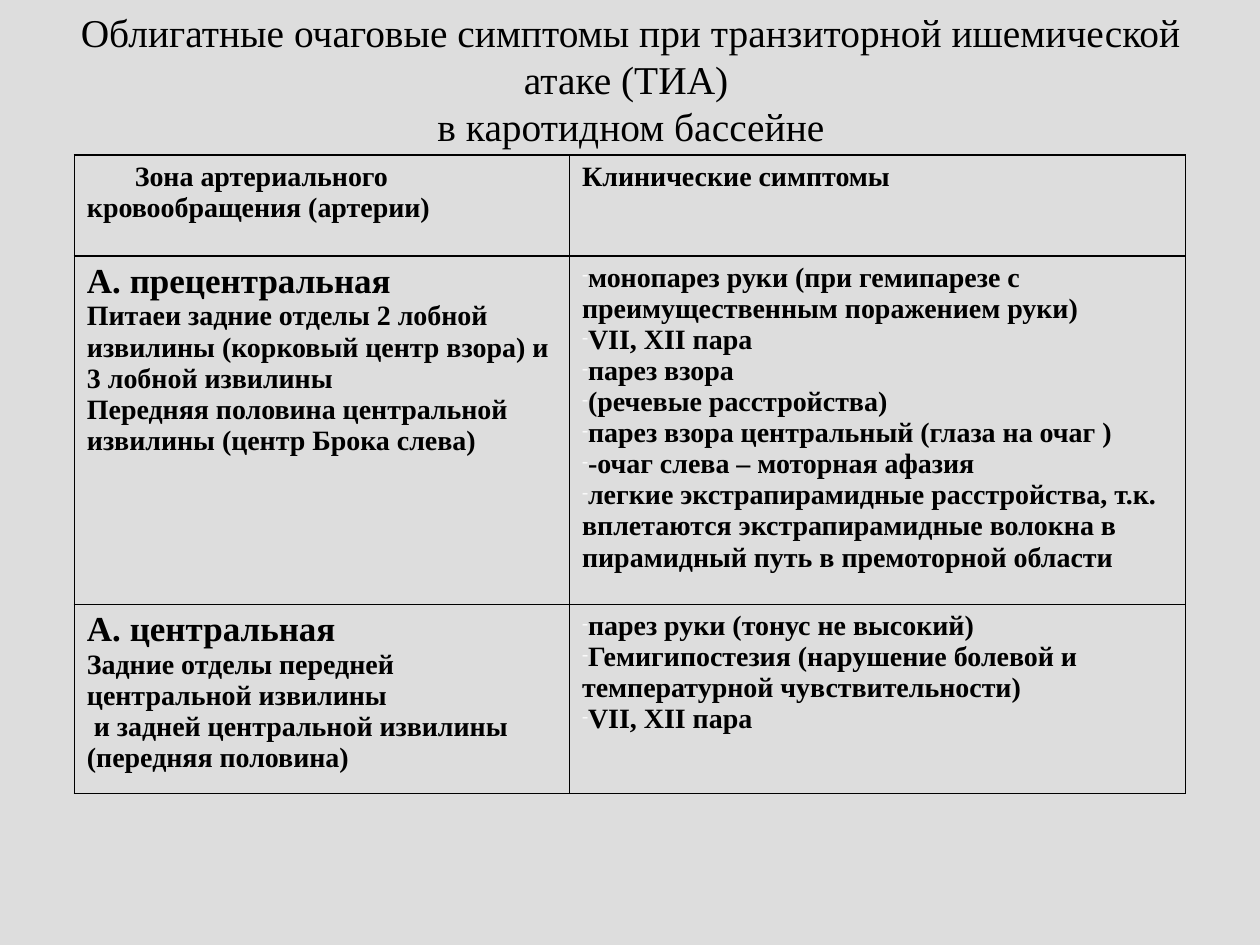
from lxml import etree
from pptx import Presentation
from pptx.dml.color import RGBColor
from pptx.enum.text import MSO_ANCHOR, PP_ALIGN
from pptx.oxml.ns import qn
from pptx.util import Inches, Pt

# Content
TITLE = ["Облигатные очаговые симптомы при транзиторной ишемической атаке (ТИА) ",
         "в каротидном бассейне"]
HEADERS = ["Зона артериального кровообращения (артерии)", "Клинические симптомы"]
ARTERIES = [
    ("А. прецентральная",
     ["Питаеи задние отделы 2 лобной извилины (корковый центр взора) и 3 лобной извилины",
      "Передняя половина центральной извилины (центр Брока слева)"],
     ["монопарез руки (при гемипарезе с преимущественным поражением руки)",
      "VII, ХII пара",
      "парез взора",
      "(речевые расстройства)",
      "парез взора центральный (глаза на очаг )",
      "-очаг слева – моторная афазия",
      "легкие экстрапирамидные расстройства, т.к. вплетаются экстрапирамидные "
      "волокна в пирамидный путь в премоторной области"]),
    ("А. центральная",
     ["Задние отделы передней центральной извилины",
      " и задней центральной извилины (передняя половина)"],
     ["парез руки (тонус не высокий)",
      "Гемигипостезия (нарушение болевой и температурной чувствительности)",
      "VII, ХII пара"]),
]
COLUMN_WIDTHS = [3.93, 4.89]
ROW_HEIGHTS = [0.8, 2.57, 1.4]

# Formats
BASE = {"name": "Times New Roman", "bold": True, "size": Pt(16)}
ARTERY = BASE | {"size": Pt(20)}
HEADING = BASE | {"size": Pt(22.5), "bold": False}
INK, BACKGROUND, BULLET = "000000", "DDDDDD", "F9F9F9"


def color(value):
    return RGBColor.from_string(value)


def set_font(font, values):
    for key, value in values.items():
        setattr(font, key, value)
    font.color.rgb = color(INK)


def add_node(parent, tag, **attributes):
    return etree.SubElement(parent, qn(tag), attributes)


def add_bullet(paragraph):
    props = paragraph._p.get_or_add_pPr()
    props.set("marL", "0")
    props.set("indent", "0")
    add_node(add_node(props, "a:buClr"), "a:srgbClr", val=BULLET)
    add_node(props, "a:buSzPct", val="65000")
    add_node(props, "a:buChar", char="-")


def style_cell(cell):
    props = cell._tc.get_or_add_tcPr()
    for side in ("a:lnL", "a:lnR", "a:lnT", "a:lnB"):
        line = add_node(props, side, w=str(Pt(1)))
        add_node(add_node(line, "a:solidFill"), "a:srgbClr", val=INK)
    cell.fill.background()


def write_cell(cell, entries, bulleted=False):
    """Write (text, format) entries, one paragraph each."""
    style_cell(cell)
    frame = cell.text_frame
    for index, (text, values) in enumerate(entries):
        paragraph = frame.add_paragraph() if index else frame.paragraphs[0]
        run = paragraph.add_run()
        run.text = text
        set_font(run.font, values)
        if bulleted:
            add_bullet(paragraph)


prs = Presentation()
prs.slide_width, prs.slide_height = Inches(10), Inches(7.5)
slide = prs.slides.add_slide(prs.slide_layouts[6])
slide.background.fill.solid()
slide.background.fill.fore_color.rgb = color(BACKGROUND)

# Title
title = slide.shapes.add_textbox(Inches(0.51), 0, Inches(9), Inches(1.25)).text_frame
title.word_wrap = True
title.vertical_anchor = MSO_ANCHOR.MIDDLE
heading = title.paragraphs[0]
heading.alignment = PP_ALIGN.CENTER
for index, text in enumerate(TITLE):
    if index:
        heading.add_line_break()
    run = heading.add_run()
    run.text = text
    set_font(run.font, HEADING)

# Table
table = slide.shapes.add_table(
    len(ROW_HEIGHTS), len(COLUMN_WIDTHS), Inches(0.59), Inches(1.23),
    Inches(sum(COLUMN_WIDTHS)), Inches(sum(ROW_HEIGHTS))).table
table.first_row = table.horz_banding = False
for column, width in zip(table.columns, COLUMN_WIDTHS):
    column.width = Inches(width)
for row, height in zip(table.rows, ROW_HEIGHTS):
    row.height = Inches(height)

# Header row
for cell, text in zip(table.rows[0].cells, HEADERS):
    write_cell(cell, [(text, BASE)])
zone, symptoms = (cell.text_frame.paragraphs[0] for cell in table.rows[0].cells)
zone._p.get_or_add_pPr().set("indent", str(Inches(0.38)))
symptoms.alignment = PP_ALIGN.JUSTIFY

# Artery rows
for row, (artery, areas, signs) in enumerate(ARTERIES, start=1):
    write_cell(table.cell(row, 0), [(artery, ARTERY)] + [(area, BASE) for area in areas])
    write_cell(table.cell(row, 1), [(sign, BASE) for sign in signs], bulleted=True)

prs.save("out.pptx")
